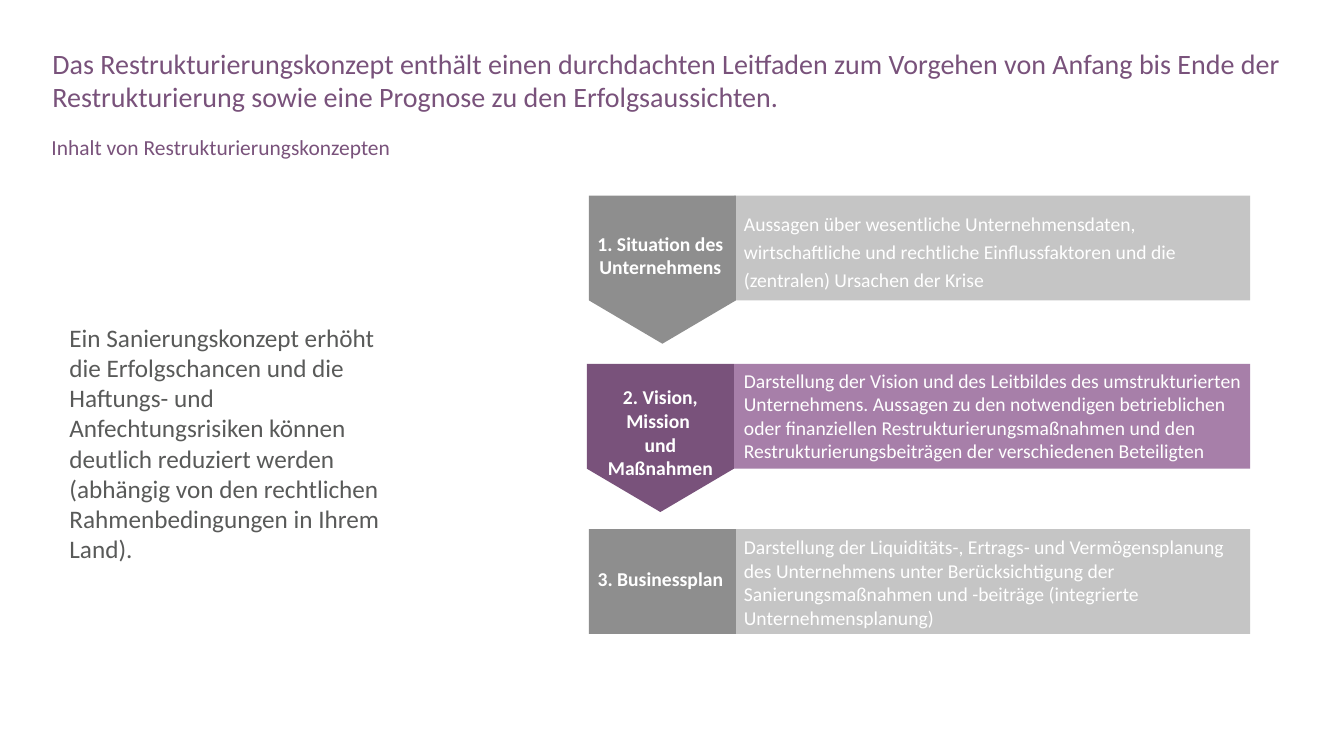
from lxml import etree
from pptx import Presentation
from pptx.dml.color import RGBColor
from pptx.enum.shapes import MSO_SHAPE
from pptx.enum.text import MSO_ANCHOR, MSO_AUTO_SIZE, PP_ALIGN
from pptx.oxml.ns import qn
from pptx.util import Inches, Pt

RECTANGLE = MSO_SHAPE.RECTANGLE
TOP, MIDDLE = MSO_ANCHOR.TOP, MSO_ANCHOR.MIDDLE
LEFT, CENTER = PP_ALIGN.LEFT, PP_ALIGN.CENTER
NO_AUTOFIT = MSO_AUTO_SIZE.NONE

COLORS = {
    "purple": "79527B",
    "light purple": "A77FA9",
    "gray": "8E8E8E",
    "light gray": "C5C5C5",
    "text": "595A59",
    "white": "FFFFFF",
}

STEP_HEIGHT = 1.04
HEADER_WIDTH = 1.46
TIP_HEIGHT = 0.43
BAR_LEFT, BAR_WIDTH = 7.28, 5.12
LABEL_WIDTH, LABEL_HEIGHT = 1.58, 1.04

STEPS = [
    {
        "label": "1. Situation des Unternehmens",
        "text": "Aussagen über wesentliche Unternehmensdaten, wirtschaftliche und "
                "rechtliche Einflussfaktoren und die (zentralen) Ursachen der Krise",
        "top": 1.94, "left": 5.84, "label_middle": 2.53, "colors": ("gray", "light gray"),
        "margin_top": 0.12, "margin_right": 0.6, "line_spacing": 1.19,
    },
    {
        "label": "2. Vision, Mission \vund Maßnahmen",
        "text": "Darstellung der Vision und des Leitbildes des umstrukturierten "
                "Unternehmens. Aussagen zu den notwendigen betrieblichen oder finanziellen "
                "Restrukturierungsmaßnahmen und den Restrukturierungsbeiträgen der "
                "verschiedenen Beteiligten",
        "top": 3.61, "left": 5.82, "label_middle": 4.29, "colors": ("purple", "light purple"),
        "margin_top": 0.05, "margin_right": 0, "line_spacing": 1.0,
    },
    {
        "label": "3. Businessplan",
        "text": "Darstellung der Liquiditäts-, Ertrags- und Vermögensplanung des "
                "Unternehmens unter Berücksichtigung der Sanierungsmaßnahmen und -beiträge "
                "(integrierte Unternehmensplanung)",
        "top": 5.25, "left": 5.84, "label_middle": 5.74, "colors": ("gray", "light gray"),
        "margin_top": 0.06, "margin_right": 0.2, "line_spacing": 1.0,
    },
]


class SlideBuilder:
    """Holds the font and the slide that the elements are added to."""

    font_name = "Calibri"

    def __init__(self, slide):
        self.slide = slide

    def set_text(self, shape, text, size, color, bold=False, align=LEFT, anchor=TOP,
                 line_spacing=1.0, margin_top=0.05, margin_right=0.1):
        frame = shape.text_frame
        frame_format = {
            "word_wrap": True,
            "auto_size": NO_AUTOFIT,
            "vertical_anchor": anchor,
            "margin_left": Inches(0.1),
            "margin_right": Inches(margin_right),
            "margin_top": Inches(margin_top),
            "margin_bottom": Inches(0.05),
        }
        for name, value in frame_format.items():
            setattr(frame, name, value)
        frame.text = text
        paragraph = frame.paragraphs[0]
        paragraph_format = {
            "alignment": align,
            "line_spacing": line_spacing,
            "space_before": Pt(0),
        }
        for name, value in paragraph_format.items():
            setattr(paragraph, name, value)
        for run in paragraph.runs:
            font_format = {"name": self.font_name, "size": Pt(size), "bold": bold}
            for name, value in font_format.items():
                setattr(run.font, name, value)
            run.font.color.rgb = RGBColor.from_string(COLORS[color])

    def placeholder(self, shape, box, text, size, **style):
        shape.left, shape.top, shape.width, shape.height = map(Inches, box)
        self.set_text(shape, text, size, "purple", **style)

    def remove_bullet(self, shape):
        properties = shape.text_frame.paragraphs[0]._p.get_or_add_pPr()
        properties.set("marL", "0")
        properties.set("indent", "0")
        etree.SubElement(properties, qn("a:buNone"))

    def text_box(self, box, text, size, color, **style):
        shape = self.slide.shapes.add_textbox(*map(Inches, box))
        self.set_text(shape, text, size, color, **style)

    def paint(self, shape, color):
        shape.shadow.inherit = False
        shape.fill.solid()
        shape.fill.fore_color.rgb = RGBColor.from_string(COLORS[color])
        shape.line.fill.background()

    def rectangle(self, box, color):
        shape = self.slide.shapes.add_shape(RECTANGLE, *map(Inches, box))
        self.paint(shape, color)
        return shape

    def down_pentagon(self, left, top, color):
        """Draws a step header whose lower side ends in a point."""
        right, bottom = left + HEADER_WIDTH, top + STEP_HEIGHT
        points = [
            (right, top),
            (right, bottom),
            (left + HEADER_WIDTH / 2, bottom + TIP_HEIGHT),
            (left, bottom),
        ]
        builder = self.slide.shapes.build_freeform(Inches(left), Inches(top))
        builder.add_line_segments([(Inches(x), Inches(y)) for x, y in points], close=True)
        self.paint(builder.convert_to_shape(), color)

    def step(self, step, is_last):
        header_color, bar_color = step["colors"]
        left, top = step["left"], step["top"]
        bar = self.rectangle((BAR_LEFT, top, BAR_WIDTH, STEP_HEIGHT), bar_color)
        style = {name: step[name] for name in ("margin_top", "margin_right", "line_spacing")}
        self.set_text(bar, step["text"], 14, "white", **style)
        if is_last:
            self.rectangle((left, top, HEADER_WIDTH, STEP_HEIGHT), header_color)
        else:
            self.down_pentagon(left, top, header_color)
        label_top = step["label_middle"] - LABEL_HEIGHT / 2
        self.text_box((5.76, label_top, LABEL_WIDTH, LABEL_HEIGHT), step["label"], 14, "white",
                      bold=True, align=CENTER, anchor=MIDDLE)


def main():
    presentation = Presentation()
    presentation.slide_width = Inches(13.33)
    presentation.slide_height = Inches(7.5)
    slide = presentation.slides.add_slide(presentation.slide_layouts[1])
    builder = SlideBuilder(slide)

    builder.placeholder(
        slide.shapes.title, (0.42, 0.41, 12.54, 0.64),
        "Das Restrukturierungskonzept enthält einen durchdachten Leitfaden zum Vorgehen von "
        "Anfang bis Ende der Restrukturierung sowie eine Prognose zu den Erfolgsaussichten.",
        20)
    subtitle = slide.placeholders[1]
    builder.placeholder(subtitle, (0.41, 1.35, 12.56, 0.28),
                        "Inhalt von Restrukturierungskonzepten", 15.3, line_spacing=0.7)
    builder.remove_bullet(subtitle)

    builder.text_box(
        (0.59, 1.96, 3.49, 4.87),
        "Ein Sanierungskonzept erhöht die Erfolgschancen und die Haftungs- und "
        "Anfechtungsrisiken können deutlich reduziert werden (abhängig von den rechtlichen "
        "Rahmenbedingungen in Ihrem Land).",
        18, "text", anchor=MIDDLE)

    for step in STEPS:
        builder.step(step, is_last=step is STEPS[-1])

    presentation.save("out.pptx")


if __name__ == "__main__":
    main()
